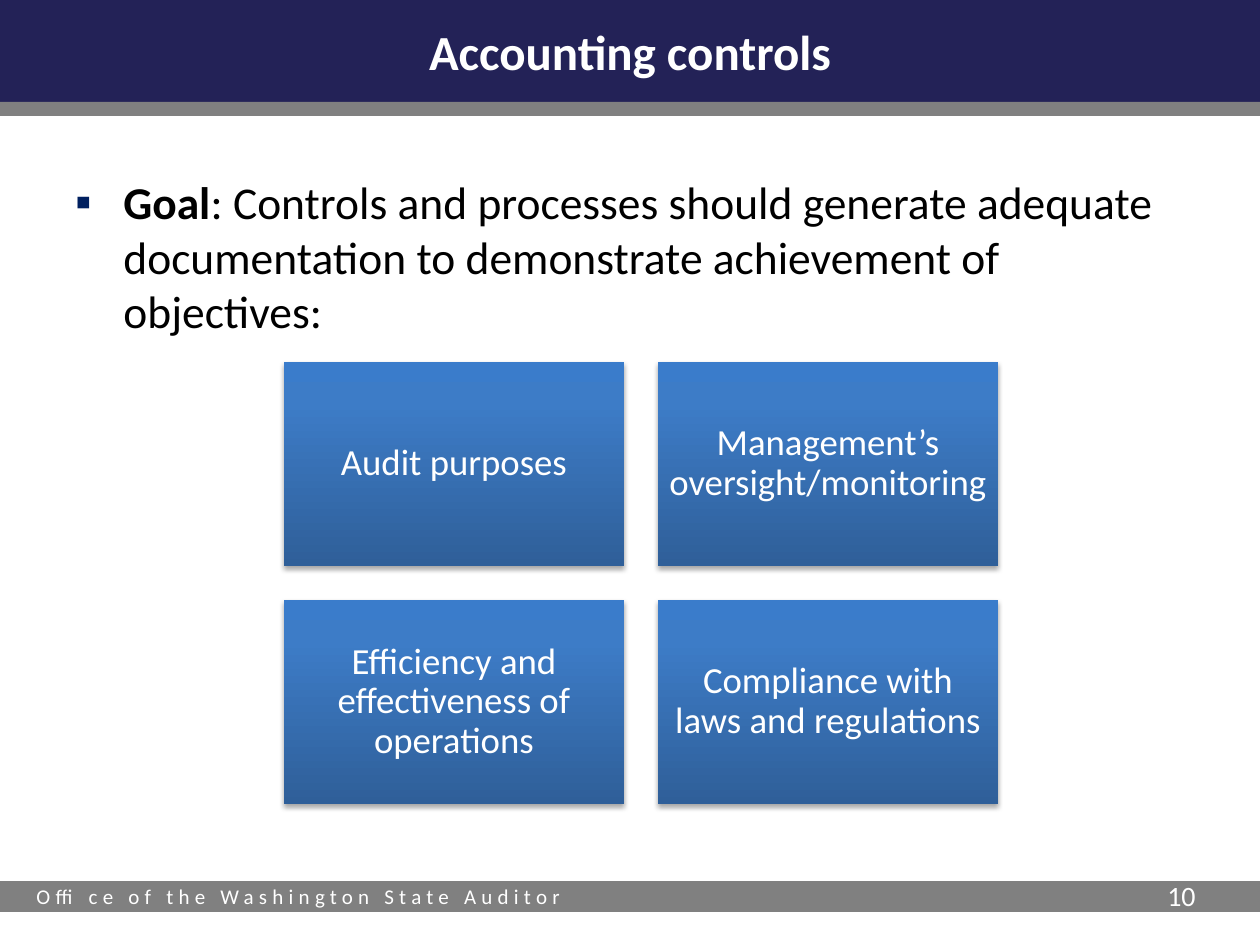
import pptx
import pptx.util
import pptx.dml.color
import pptx.enum.shapes
import pptx.enum.text
import pptx.oxml
from lxml import etree

Pt = pptx.util.Pt
ALIGN = pptx.enum.text.PP_ALIGN
ANCHOR = pptx.enum.text.MSO_ANCHOR
RECT = pptx.enum.shapes.MSO_SHAPE.RECTANGLE
NS = "http://schemas.openxmlformats.org/drawingml/2006/main"

TITLE = "Accounting controls"
GOAL = ("Goal", ": Controls and processes should generate adequate "
        "documentation to demonstrate achievement of objectives:")
CARDS = [
    "Audit purposes",
    "Management’s oversight/monitoring",
    "Efficiency and effectiveness of operations",
    "Compliance with laws and regulations",
]
FOOTER = "Office of the Washington State Auditor"
PAGE = "10"

FONT = "Calibri"
COLORS = {"navy": "232257", "gray": "808080", "white": "FFFFFF",
          "black": "000000", "bullet": "002060"}
STOPS = [(0, "2F5F99"), (80, "3D7CC7"), (100, "3A7CCB")]
BANDS = [(0, 102, "navy"), (102, 14, "gray"), (881, 31, "gray")]  # top, height, fill

WIDE, HIGH = 1260, 945
CARD_W, CARD_H, GAP = 340, 204, 34
GRID_X, GRID_Y, COLS = 284, 362, 2


def px(n):
    return round(n * 914400 / 126)


def color(name):
    return pptx.dml.color.RGBColor.from_string(COLORS[name])


def style(para, size, tint="white", bold=False, align=ALIGN.LEFT):
    para.alignment = align
    para.font.name = FONT
    para.font.size = Pt(size)
    para.font.bold = bold
    para.font.color.rgb = color(tint)


def rect(slide, x, y, w, h):
    shape = slide.shapes.add_shape(RECT, px(x), px(y), px(w), px(h))
    shape.line.fill.background()
    shape.shadow.inherit = False
    return shape


def label(slide, x, y, w, h, text="", wrap=True):
    box = slide.shapes.add_textbox(px(x), px(y), px(w), px(h))
    box.text_frame.word_wrap = wrap
    para = box.text_frame.paragraphs[0]
    if text:
        para.add_run().text = text
    return box.text_frame, para


def shade(shape):
    """Give a card its three-stop gradient and soft drop shadow."""
    props = shape.fill._xPr
    stops = "".join(f'<a:gs pos="{pos * 1000}"><a:srgbClr val="{tint}"/></a:gs>'
                    for pos, tint in STOPS)
    grad = pptx.oxml.parse_xml(
        f'<a:gradFill xmlns:a="{NS}" rotWithShape="1"><a:gsLst>{stops}</a:gsLst>'
        '<a:lin ang="16200000" scaled="0"/></a:gradFill>')
    props.find(f"{{{NS}}}prstGeom").addnext(grad)
    glow = pptx.oxml.parse_xml(
        f'<a:outerShdw xmlns:a="{NS}" blurRad="{Pt(3.1)}" dist="{Pt(1.8)}" '
        'dir="5400000" rotWithShape="0"><a:srgbClr val="000000">'
        '<a:alpha val="35000"/></a:srgbClr></a:outerShdw>')
    props.find(f"{{{NS}}}effectLst").append(glow)


def bullet(para, indent):
    props = para._p.get_or_add_pPr()
    props.set("marL", str(px(indent)))
    props.set("indent", str(-px(indent)))
    mark = etree.Element(f"{{{NS}}}buClr")
    etree.SubElement(mark, f"{{{NS}}}srgbClr", val=COLORS["bullet"])
    font = etree.Element(f"{{{NS}}}buFont", typeface="Wingdings")
    sign = etree.Element(f"{{{NS}}}buChar", char="▪")
    font.set("typeface", FONT)
    place = props.find(f"{{{NS}}}defRPr")
    for part in (mark, font, sign):
        place.addprevious(part)


def card(slide, spot, text):
    row, col = divmod(spot, COLS)
    shape = rect(slide, GRID_X + col * (CARD_W + GAP),
                 GRID_Y + row * (CARD_H + GAP), CARD_W, CARD_H)
    shade(shape)
    frame = shape.text_frame
    frame.word_wrap = True
    frame.vertical_anchor = ANCHOR.MIDDLE
    frame.margin_left = frame.margin_right = px(11)
    frame.margin_top = frame.margin_bottom = px(11)
    para = frame.paragraphs[0]
    para.add_run().text = text
    para.line_spacing = 0.9
    style(para, 21, align=ALIGN.CENTER)


def main():
    deck = pptx.Presentation()
    deck.slide_width, deck.slide_height = px(WIDE), px(HIGH)
    slide = deck.slides.add_slide(deck.slide_layouts[6])

    for top, high, tint in BANDS:
        band = rect(slide, 0, top, WIDE, high)
        band.fill.solid()
        band.fill.fore_color.rgb = color(tint)

    para = label(slide, 24, 877, 559, 38, FOOTER, wrap=False)[1]
    style(para, 12)
    para.runs[0].font._element.set("spc", "300")

    para = label(slide, 63, 168, 1134, 693)[1]
    for text in GOAL:
        para.add_run().text = text
    para.space_after = Pt(12)
    style(para, 26, "black")
    para.runs[0].font.bold = True
    bullet(para, 48)

    frame, para = label(slide, 0, 0, WIDE, 102, TITLE)
    frame.vertical_anchor = ANCHOR.MIDDLE
    style(para, 28, bold=True, align=ALIGN.CENTER)

    style(label(slide, 1155, 872, 73, 50, PAGE)[1], 16)

    for spot, text in enumerate(CARDS):
        card(slide, spot, text)

    deck.save("out.pptx")


if __name__ == "__main__":
    main()
